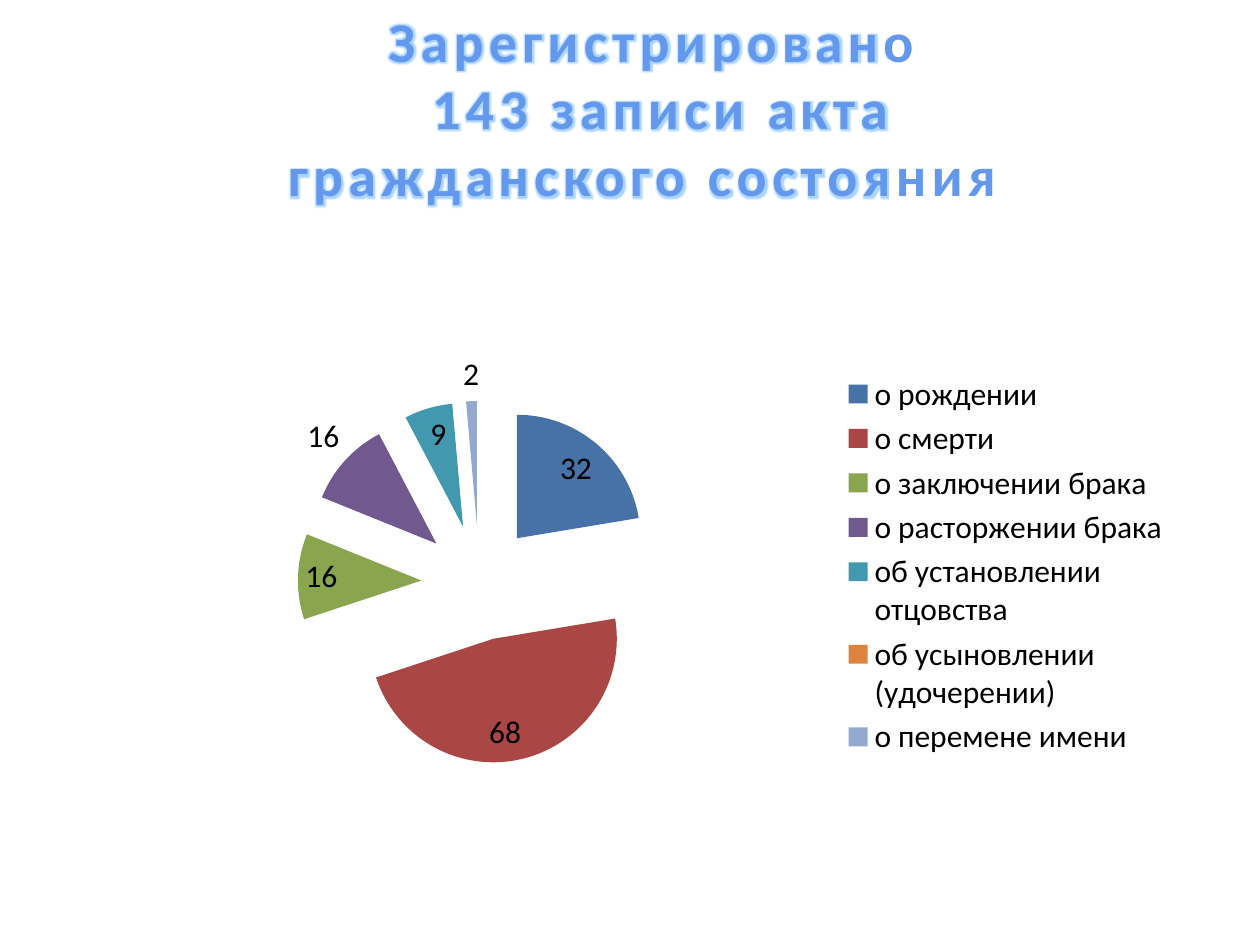
from lxml import etree
from pptx import Presentation
from pptx.chart.data import CategoryChartData
from pptx.dml.color import RGBColor
from pptx.enum.chart import XL_CHART_TYPE, XL_LABEL_POSITION, XL_LEGEND_POSITION
from pptx.enum.text import MSO_ANCHOR, MSO_AUTO_SIZE, PP_ALIGN
from pptx.oxml import parse_xml
from pptx.util import Pt

PIE = XL_CHART_TYPE.PIE
RIGHT = XL_LEGEND_POSITION.RIGHT
INNER = XL_LABEL_POSITION.INSIDE_END
OUTER = XL_LABEL_POSITION.OUTSIDE_END
NS = "http://schemas.openxmlformats.org/drawingml/2006/main"
CNS = "http://schemas.openxmlformats.org/drawingml/2006/chart"
PX = 914400 // 126
FONT = "Calibri"

TITLE = ["Зарегистрировано", " 143 записи акта", "гражданского состояния "]
ACTS = [
    ("о рождении", 32, "4672A8", INNER),
    ("о смерти", 68, "AA4643", INNER),
    ("о заключении брака", 16, "89A54E", INNER),
    ("о расторжении брака", 16, "71588F", OUTER),
    ("об установлении отцовства", 9, "4298AF", INNER),
    ("об усыновлении (удочерении)", 0, "DB843D", None),
    ("о перемене имени", 2, "93A9CF", OUTER),
]
STOPS = [(0.1, "6398ED"), (0.75, "265EA0")]
PLOT = {"x": 0.06, "y": 0.26, "w": 0.55, "h": 0.53}
LINE = f'<a:ln xmlns:a="{NS}" w="11430"><a:solidFill><a:srgbClr val="F4F6F9"/></a:solidFill></a:ln>'
GLOW = (f'<a:effectLst xmlns:a="{NS}"><a:glow rad="45500"><a:srgbClr val="0A84FF">'
        '<a:alpha val="35000"/></a:srgbClr></a:glow></a:effectLst>')


def color(text):
    return RGBColor.from_string(text)


def box(*sizes):
    return [size * PX for size in sizes]


def style(run):
    font = run.font
    font.size, font.bold = Pt(32), True
    font.fill.gradient()
    font.fill.gradient_angle = 270
    for stop, (place, tint) in zip(font.fill.gradient_stops, STOPS):
        stop.position = place
        stop.color.rgb = color(tint)
    props = run._r.get_or_add_rPr()
    props.set("spc", "300")
    props.insert(0, parse_xml(LINE))
    props.append(parse_xml(GLOW))
    font.name = FONT


def add_title(slide):
    title = slide.shapes.title
    title.left, title.top, title.width, title.height = box(266, 0, 771, 217)
    frame = title.text_frame
    frame.word_wrap = False
    frame.auto_size = MSO_AUTO_SIZE.SHAPE_TO_FIT_TEXT
    frame.vertical_anchor = MSO_ANCHOR.TOP
    for i, line in enumerate(TITLE):
        para = frame.add_paragraph() if i else frame.paragraphs[0]
        para.alignment = PP_ALIGN.CENTER
        run = para.add_run()
        run.text = line
        style(run)


def set_plot(chart):
    area = chart._chartSpace.chart.plotArea
    for old in area.findall(f"{{{CNS}}}layout"):
        area.remove(old)
    layout = etree.Element(f"{{{CNS}}}layout")
    manual = etree.SubElement(layout, f"{{{CNS}}}manualLayout")
    parts = [("layoutTarget", "inner"), ("xMode", "edge"), ("yMode", "edge"), *PLOT.items()]
    for tag, val in parts:
        etree.SubElement(manual, f"{{{CNS}}}{tag}").set("val", str(val))
    area.insert(0, layout)


def add_pie(slide):
    data = CategoryChartData(number_format="0;;")
    data.categories = [act[0] for act in ACTS]
    data.add_series("Series 1", [act[1] for act in ACTS])
    chart = slide.shapes.add_chart(PIE, *box(125, 223, 1058, 685), data).chart
    chart.has_title = False
    chart.font.name, chart.font.size = FONT, Pt(18)
    chart.font.color.rgb = color("000000")
    chart.has_legend = True
    chart.legend.position = RIGHT
    chart.legend.include_in_layout = False
    set_plot(chart)
    plot = chart.plots[0]
    plot.vary_by_categories = True
    series = plot.series[0]
    labels = series.data_labels
    labels.show_value = True
    labels.number_format, labels.number_format_is_linked = "0;;", False
    labels.position = INNER
    for i, (name, count, tint, side) in enumerate(ACTS):
        point = series.points[i]
        point.format.fill.solid()
        point.format.fill.fore_color.rgb = color(tint)
        if side == OUTER:
            point.data_label.position = side
    burst = etree.Element(f"{{{CNS}}}explosion", val="47")
    series._element.find(f"{{{CNS}}}dPt").addprevious(burst)
    for spot in series._element.findall(f"{{{CNS}}}dPt"):
        etree.SubElement(spot, f"{{{CNS}}}explosion").set("val", "47")
        spot.find(f"{{{CNS}}}spPr").addprevious(spot[-1])


def main():
    deck = Presentation()
    deck.slide_width, deck.slide_height = box(1260, 945)
    slide = deck.slides.add_slide(deck.slide_layouts[5])
    add_title(slide)
    add_pie(slide)
    deck.save("out.pptx")


if __name__ == "__main__":
    main()
